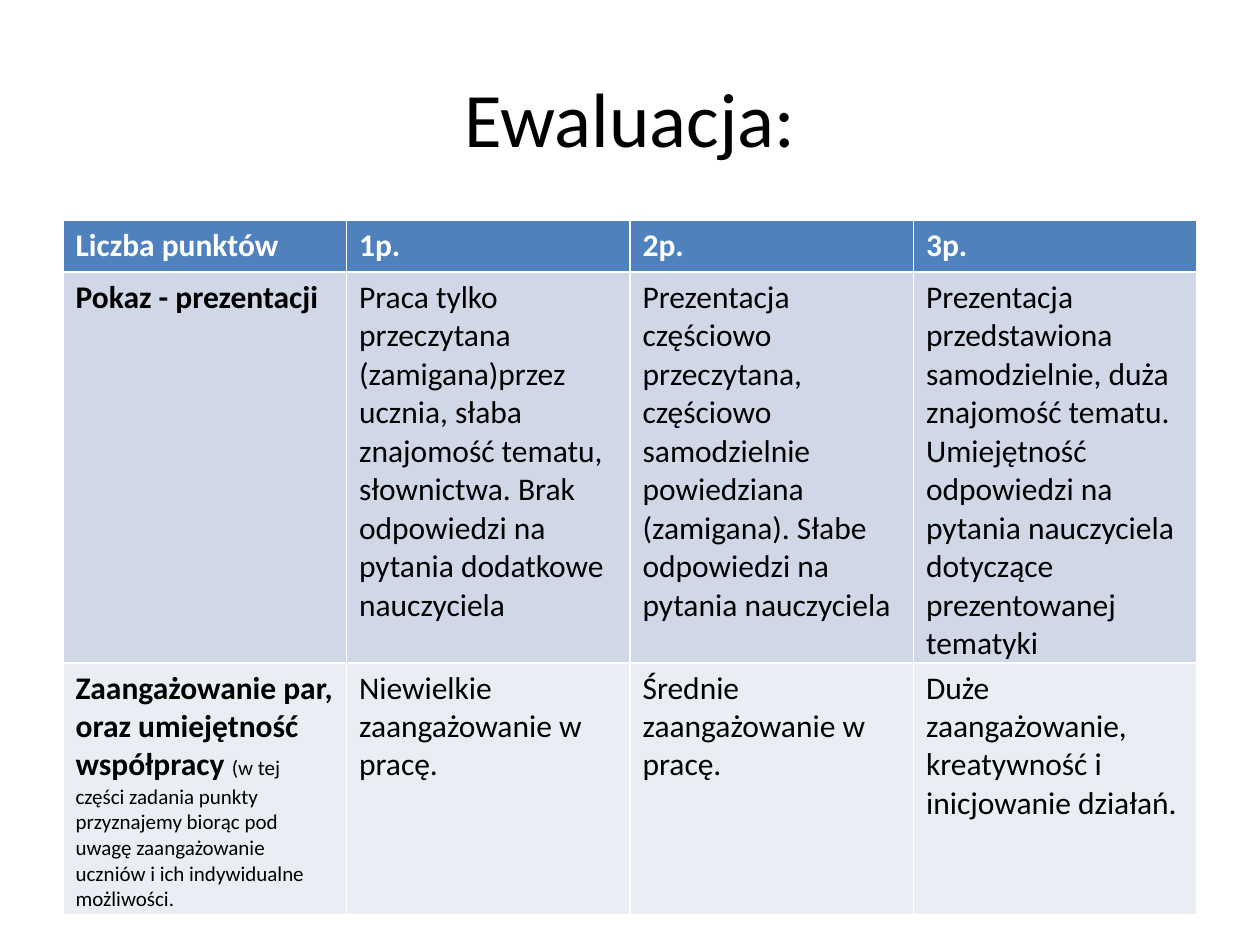
from dataclasses import dataclass

from pptx import Presentation
from pptx.dml.color import RGBColor
from pptx.enum.text import MSO_ANCHOR, PP_ALIGN
from pptx.util import Inches, Pt

MIDDLE = MSO_ANCHOR.MIDDLE
CENTER = PP_ALIGN.CENTER


@dataclass(frozen=True)
class Theme:
    font: str = "Calibri"
    title_size: Pt = Pt(44)
    body_size: Pt = Pt(18)
    note_size: Pt = Pt(12)
    text: RGBColor = RGBColor(0x00, 0x00, 0x00)
    header_text: RGBColor = RGBColor(0xFF, 0xFF, 0xFF)
    row_fills: tuple = (
        RGBColor(0x4F, 0x81, 0xBD),
        RGBColor(0xD0, 0xD8, 0xE8),
        RGBColor(0xE9, 0xED, 0xF4),
    )


THEME = Theme()

CRITERIA = [
    ["Liczba punktów", "1p.", "2p.", "3p."],
    [
        "Pokaz - prezentacji",
        "Praca tylko przeczytana (zamigana)przez ucznia, słaba znajomość tematu, "
        "słownictwa. Brak odpowiedzi na pytania dodatkowe nauczyciela",
        "Prezentacja częściowo przeczytana, częściowo samodzielnie powiedziana "
        "(zamigana). Słabe odpowiedzi na pytania nauczyciela",
        "Prezentacja przedstawiona samodzielnie, duża znajomość tematu. Umiejętność "
        "odpowiedzi na pytania nauczyciela dotyczące prezentowanej tematyki",
    ],
    [
        "Zaangażowanie par, oraz umiejętność współpracy ",
        "Niewielkie zaangażowanie w pracę.",
        "Średnie zaangażowanie w pracę.",
        "Duże zaangażowanie, kreatywność i inicjowanie działań.",
    ],
]
COOPERATION_NOTE = (
    "(w tej części zadania punkty przyznajemy biorąc pod uwagę zaangażowanie "
    "uczniów i ich indywidualne możliwości."
)


def style_font(font, size, color, bold=False):
    font.name = THEME.font
    font.size = size
    font.bold = bold
    font.color.rgb = color


prs = Presentation()
prs.slide_width, prs.slide_height = Inches(10), Inches(7.5)
slide = prs.slides.add_slide(prs.slide_layouts[6])

# Title
heading = slide.shapes.add_textbox(Inches(0.5), Inches(0.3), Inches(9), Inches(1.25))
heading.text_frame.word_wrap = True
heading.text_frame.vertical_anchor = MIDDLE
heading_line = heading.text_frame.paragraphs[0]
heading_line.text = "Ewaluacja:"
heading_line.alignment = CENTER
style_font(heading_line.font, THEME.title_size, THEME.text)

# Scoring table: the default table style draws the white rules,
# and the rows grow to fit their text
row_height = Inches(0.41)
scoring = slide.shapes.add_table(
    len(CRITERIA), len(CRITERIA[0]),
    Inches(0.5), Inches(1.75), Inches(9), row_height * len(CRITERIA),
).table
scoring.first_col = False
for r, row in enumerate(CRITERIA):
    scoring.rows[r].height = row_height
    for c, wording in enumerate(row):
        cell = scoring.cell(r, c)
        cell.fill.solid()
        cell.fill.fore_color.rgb = THEME.row_fills[r]
        cell.text = wording
        style_font(
            cell.text_frame.paragraphs[0].font,
            THEME.body_size,
            THEME.header_text if r == 0 else THEME.text,
            bold=r == 0 or c == 0,
        )

# Small print after the cooperation criterion
cooperation = scoring.cell(2, 0).text_frame.paragraphs[0]
note = cooperation.add_run()
note.text = COOPERATION_NOTE
style_font(note.font, THEME.note_size, THEME.text)

prs.save("out.pptx")
